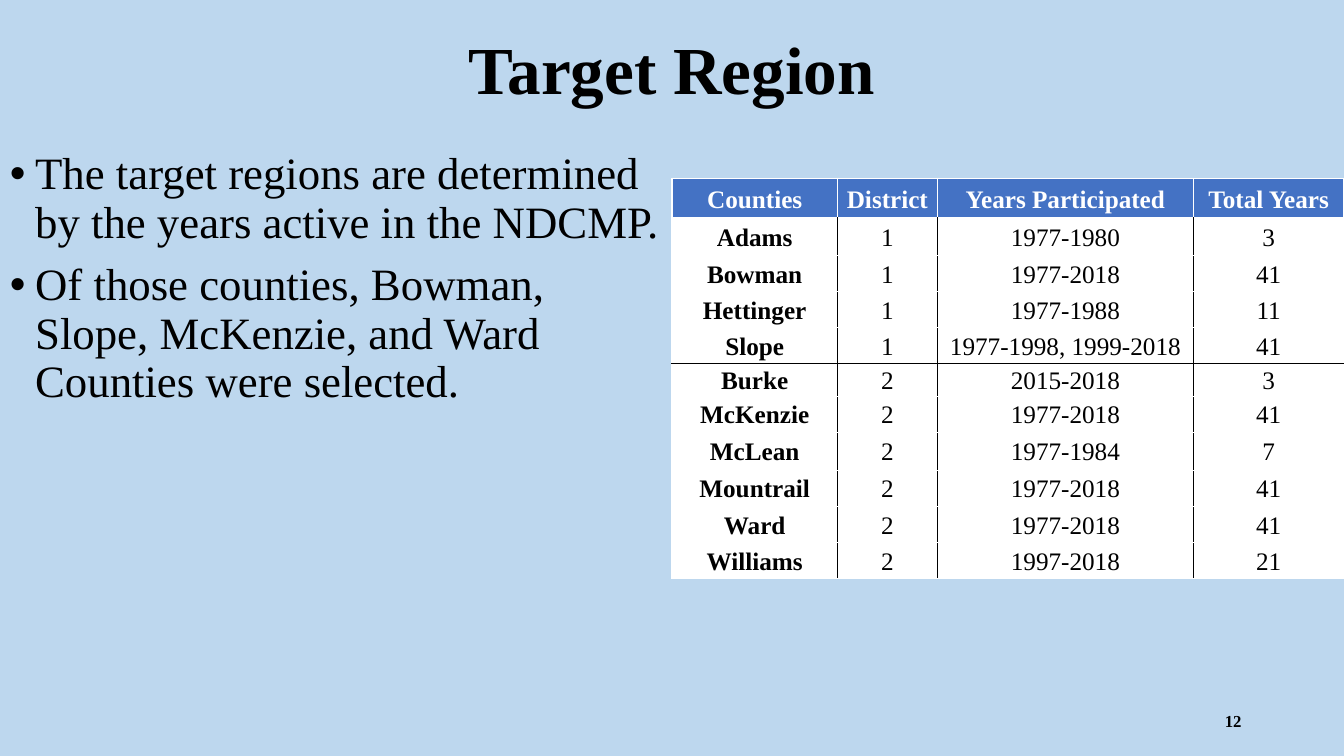
from lxml import etree
from pptx import Presentation, util as u
from pptx.dml.color import RGBColor
from pptx.enum import text
from pptx.oxml import ns

BLACK, WHITE, BLUE, SKY = "000000", "FFFFFF", "4472C4", "BDD7EE"
LEFT, MID, RIGHT = text.PP_ALIGN.LEFT, text.PP_ALIGN.CENTER, text.PP_ALIGN.RIGHT


def color(code):
    return RGBColor.from_string(code)


def sub(parent, tag, **attrs):
    return etree.SubElement(parent, ns.qn(tag), attrs)


class Deck:
    face = "Times New Roman"

    def __init__(self, width, height, back):
        self.prs = Presentation()
        self.prs.slide_width, self.prs.slide_height = u.Pt(width), u.Pt(height)
        self.slide = self.prs.slides.add_slide(self.prs.slide_layouts[6])
        fill = self.slide.background.fill
        fill.solid()
        fill.fore_color.rgb = color(back)

    def style(self, para, size, bold=False, ink=BLACK, align=LEFT, lead=1.0):
        para.alignment, para.line_spacing = align, lead
        font = para.font
        font.name, font.size, font.bold = self.face, u.Pt(size), bold
        font.color.rgb = color(ink)

    def text(self, box, lines, anchor=text.MSO_ANCHOR.MIDDLE, bullet=False, **look):
        frame = self.slide.shapes.add_textbox(*map(u.Pt, box)).text_frame
        frame.word_wrap, frame.vertical_anchor = True, anchor
        for i, line in enumerate(lines):
            para = frame.add_paragraph() if i else frame.paragraphs[0]
            para.text = line
            if bullet:
                props = para._p.get_or_add_pPr()
                props.set("marL", str(u.Pt(18)))
                props.set("indent", str(u.Pt(-18)))
                sub(props, "a:buFont", typeface="Arial")
                sub(props, "a:buChar", char="•")
            if i:
                para.space_before = u.Pt(10)
            self.style(para, **look)

    def edge(self, cell, side, ink, width):
        line = sub(cell._tc.get_or_add_tcPr(), f"a:ln{side}", w=str(u.Pt(width)))
        sub(sub(line, "a:solidFill"), "a:srgbClr", val=ink)

    def cell(self, cell, words, fill, edges, **look):
        for side, (ink, width) in edges.items():
            self.edge(cell, side, ink, width)
        cell.fill.solid()
        cell.fill.fore_color.rgb = color(fill)
        cell.margin_left = cell.margin_right = u.Pt(5)
        cell.margin_top = cell.margin_bottom = 0
        cell.vertical_anchor = text.MSO_ANCHOR.MIDDLE
        cell.text = words
        self.style(cell.text_frame.paragraphs[0], 18, align=MID, lead=1.07, **look)

    def table(self, left, top, widths, heights, rows, split):
        """Draw rows under a header, with a black rule below row number split."""
        grid = self.slide.shapes.add_table(
            len(rows), len(widths), *map(u.Pt, (left, top, sum(widths), sum(heights)))).table
        grid.first_row = grid.horz_banding = False
        for col, width in zip(grid.columns, widths):
            col.width = u.Pt(width)
        for row, height in zip(grid.rows, heights):
            row.height = u.Pt(height)
        last = len(widths) - 1
        for r, row in enumerate(rows):
            head = r == 0
            for c, words in enumerate(row):
                edges = {
                    "L": (WHITE if head or c == 0 else BLACK, 1),
                    "R": (WHITE if head or c == last else BLACK, 1),
                    "T": (BLACK if r == split + 1 else WHITE, 1),
                    "B": (BLACK if r == split else WHITE, 3 if head else 1),
                }
                self.cell(grid.cell(r, c), words, BLUE if head else WHITE, edges,
                          bold=head or c == 0, ink=WHITE if head else BLACK)


def main():
    deck = Deck(960, 540, SKY)

    # Title
    deck.text((66, 0, 828, 104.4), ["Target Region"], size=48, bold=True, align=MID, lead=0.9)

    # Bullets
    deck.text((0, 104.4, 480, 435.6), [
        "The target regions are determined by the years active in the NDCMP.",
        "Of those counties, Bowman, Slope, McKenzie, and Ward Counties were selected.",
    ], anchor=text.MSO_ANCHOR.TOP, bullet=True, size=32, lead=0.9)

    # County table
    rows = [
        ("Counties", "District", "Years Participated", "Total Years"),
        ("Adams", "1", "1977-1980", "3"),
        ("Bowman", "1", "1977-2018", "41"),
        ("Hettinger", "1", "1977-1988", "11"),
        ("Slope", "1", "1977-1998, 1999-2018", "41"),
        ("Burke", "2", "2015-2018", "3"),
        ("McKenzie", "2", "1977-2018", "41"),
        ("McLean", "2", "1977-1984", "7"),
        ("Mountrail", "2", "1977-2018", "41"),
        ("Ward", "2", "1977-2018", "41"),
        ("Williams", "2", "1997-2018", "21"),
    ]
    heights = [29.3] + [25.8] * 4 + [21.2, 25.8, 27.2] + [25.8] * 3
    deck.table(480, 127.4, [118.2, 71.4, 183, 107.4], heights, rows, split=4)

    # Page number
    deck.text((678, 500.5, 216, 28.75), ["12"], size=12, bold=True, align=RIGHT)

    deck.prs.save("out.pptx")


if __name__ == "__main__":
    main()
